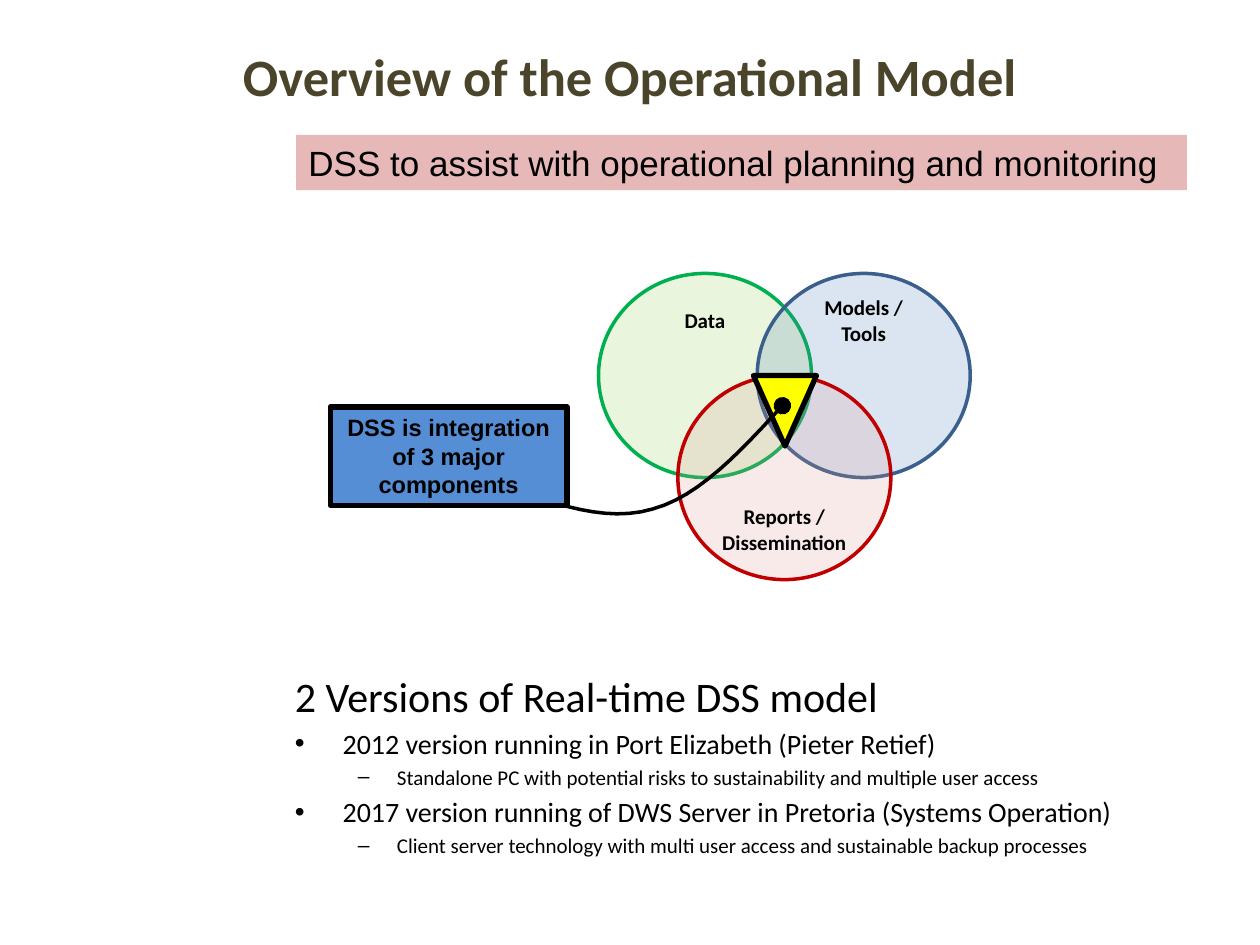
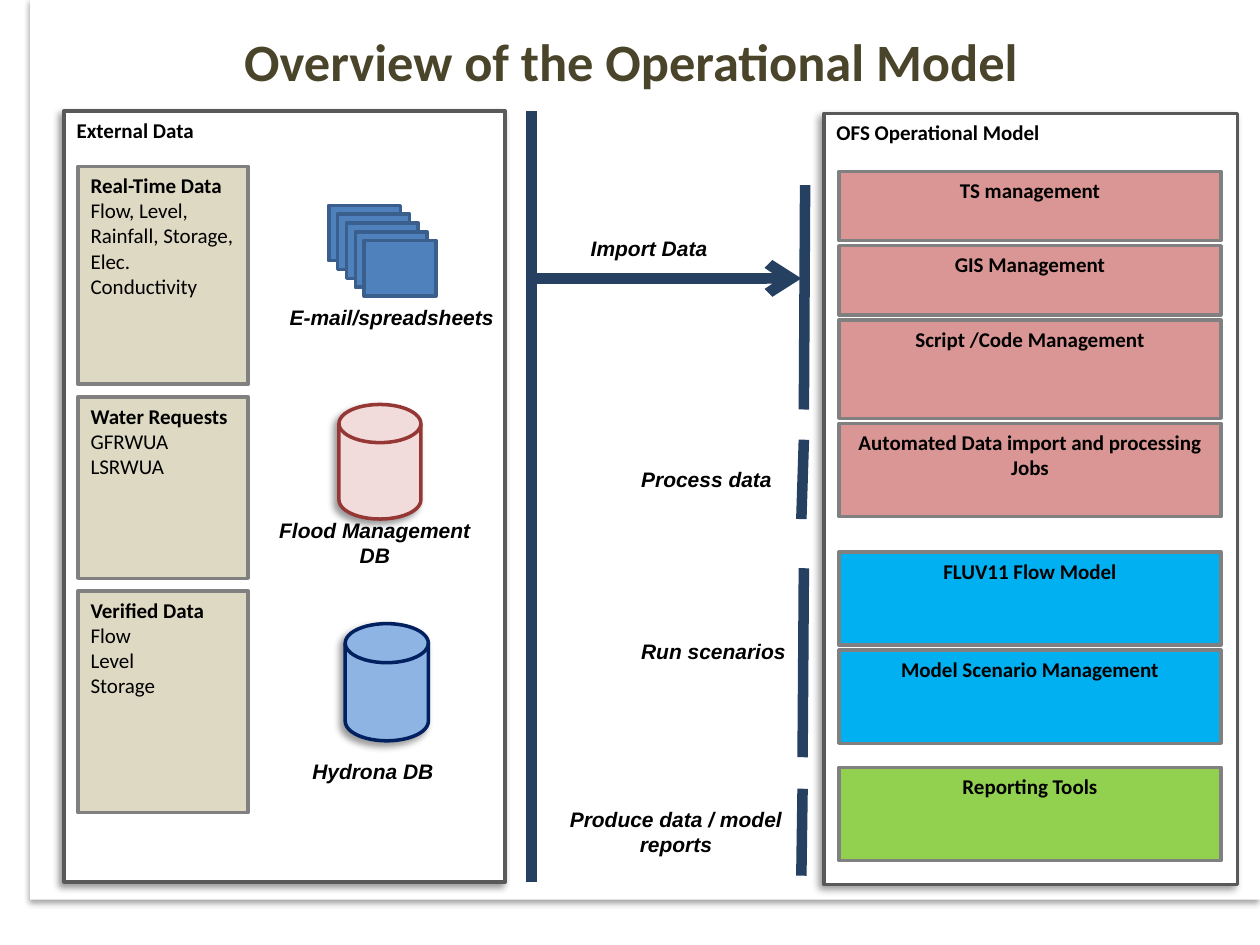
from collections import namedtuple

from lxml import etree
from pptx import Presentation
from pptx.dml.color import RGBColor
from pptx.enum import shapes as kinds, text as layout
from pptx.oxml import ns
from pptx.util import Inches, Pt

Box = namedtuple("Box", "left top width height")
SHAPE = kinds.MSO_SHAPE
LEFT, CENTER = layout.PP_ALIGN.LEFT, layout.PP_ALIGN.CENTER
TOP, MIDDLE = layout.MSO_ANCHOR.TOP, layout.MSO_ANCHOR.MIDDLE

TITLE = "Overview of the Operational Model"
BLACK, WHITE, OLIVE, NAVY = "000000", "FFFFFF", "4A452A", "254061"
BLUE, DARK_BLUE, GRAY, DARK_GRAY = "4F81BD", "3A5F8C", "808080", "595959"
ROSE, SKY, GREEN, TAN = "D99694", "00B0F0", "92D050", "DDD9C3"

TITLE_FONT = {"name": "Calibri", "size": Pt(30), "bold": True}
LABEL_FONT = {"name": "Calibri", "size": Pt(12), "bold": True}
CAPTION_FONT = {"name": "Arial", "size": Pt(12), "bold": True, "italic": True}
# Shadows: opacity in percent, blur and distance in points, direction in degrees
PANEL_SHADOW = (40, 4, 3, 135)
CARD_SHADOW = (35, 3.1, 1.8, 90)


def color(code):
    return RGBColor.from_string(code)


def set_attributes(target, values):
    for name, value in values.items():
        setattr(target, name, value)


def inches(box):
    return [Inches(value) for value in box]


def within(box, left, top, width, height):
    """Box given by its offset from the corner of another box."""
    return Box(box.left + left, box.top + top, width, height)


def add_xml(parent, tag, **attributes):
    return etree.SubElement(parent, ns.qn(tag), attributes)


def set_transparency(fill_owner, percent):
    fill_color = fill_owner._element.spPr.find(ns.qn("a:solidFill"))[0]
    add_xml(fill_color, "a:alpha", val=str(percent * 1000))


def add_shadow(shape, opacity, blur, distance, direction):
    effects = shape._element.spPr.find(ns.qn("a:effectLst"))
    shadow = add_xml(effects, "a:outerShdw", blurRad=str(Pt(blur)), dist=str(Pt(distance)),
                     dir=str(direction * 60000), algn="ctr", rotWithShape="0")
    shadow_color = add_xml(shadow, "a:srgbClr", val=BLACK)
    add_xml(shadow_color, "a:alpha", val=str(opacity * 1000))


def style_line(line, line_color, width):
    line.color.rgb = color(line_color)
    line.width = Pt(width)


def write(shape, lines, font, align=LEFT, anchor=TOP, font_color=BLACK):
    """Fill a shape with one paragraph for each line."""
    frame = shape.text_frame
    set_attributes(frame, {"word_wrap": True, "vertical_anchor": anchor,
                           "auto_size": layout.MSO_AUTO_SIZE.NONE})
    frame.text = "\n".join(lines)
    for paragraph in frame.paragraphs:
        paragraph.alignment = align
        set_attributes(paragraph.font, font)
        paragraph.font.color.rgb = color(font_color)
    return frame


def add_block(shapes, box, fill, line=None, kind=SHAPE.RECTANGLE, shadow=None):
    """Preset shape; line is a colour and a width in points."""
    shape = shapes.add_shape(kind, *inches(box))
    shape.shadow.inherit = False
    shape.fill.solid()
    shape.fill.fore_color.rgb = color(fill)
    if line:
        style_line(shape.line, *line)
    else:
        shape.line.fill.background()
    if shadow:
        add_shadow(shape, *shadow)
    return shape


def add_caption(shapes, box, *lines, align=CENTER):
    write(shapes.add_textbox(*inches(box)), lines, CAPTION_FONT, align)


def add_rule(shapes, start, end, arrow=False):
    connector = shapes.add_connector(kinds.MSO_CONNECTOR.STRAIGHT, *inches(start + end))
    style_line(connector.line, NAVY, 6)
    if arrow:
        add_xml(connector.line._get_or_add_ln(), "a:tailEnd", type="arrow")
    add_xml(connector._element.spPr, "a:effectLst")


def add_title(slide, box):
    title = slide.shapes.title
    set_attributes(title, dict(zip(Box._fields, inches(box))))
    write(title, [TITLE], TITLE_FONT, CENTER, font_color=OLIVE)


def add_components(shapes, box):
    """Three overlapping circles, with a triangle where they meet."""
    width, height = 1.69, 1.62
    circles = [("Data", 0, 0, -0.44, GREEN, "00B050"),
               ("Models / Tools", 1.26, 0, -0.44, BLUE, DARK_BLUE),
               ("Reports / Dissemination", 0.63, 0.81, 0.41, ROSE, "C00000")]
    for label, left, top, label_shift, fill, line_color in circles:
        circle = add_block(shapes, within(box, left, top, width, height), fill,
                           (line_color, 2), SHAPE.OVAL)
        set_transparency(circle, 20)
        frame = write(circle, [label], LABEL_FONT, CENTER, MIDDLE)
        frame.margin_top = Inches(max(0, 2 * label_shift))
        frame.margin_bottom = Inches(max(0, -2 * label_shift))
    triangle = add_block(shapes, within(box, 1.23, 0.81, 0.5, 0.56), "FFFF00", (BLACK, 3),
                         SHAPE.ISOSCELES_TRIANGLE)
    triangle.rotation = 180


def bezier(points, steps=12):
    """Points along a cubic curve, without its start."""
    for step in range(1, steps + 1):
        t = step / steps
        weights = ((1 - t) ** 3, 3 * t * (1 - t) ** 2, 3 * t ** 2 * (1 - t), t ** 3)
        yield tuple(Inches(sum(weight * point[axis] for weight, point in zip(weights, points)))
                    for axis in (0, 1))


def add_pointer(shapes, box):
    """Curve from a dot at the upper right to the left edge of the box."""
    offsets = [(2.2, 0), (1.87, 0.36), (1.54, 0.72), (1.17, 0.82),
               (0.8, 0.93), (0.4, 0.78), (0, 0.64)]
    points = [(box.left + x, box.top + y) for x, y in offsets]
    builder = shapes.build_freeform(*inches(points[0]))
    for first in (0, 3):
        builder.add_line_segments(list(bezier(points[first:first + 4])), close=False)
    curve = builder.convert_to_shape()
    curve.shadow.inherit = False
    curve.fill.background()
    style_line(curve.line, BLACK, 2)
    add_xml(curve.line._get_or_add_ln(), "a:headEnd", type="oval", w="lg", len="lg")


def add_versions(body, box):
    set_attributes(body, dict(zip(Box._fields, inches(box))))
    styles = {"heading": (0, 24, 0, 0, None),
              "item": (0, 16, 0.38, -0.38, "•"),
              "detail": (1, 12, 0.81, -0.31, "–")}
    lines = [
        ("heading", "2 Versions of Real-time DSS model"),
        ("item", "2012 version running in Port Elizabeth (Pieter Retief)"),
        ("detail", "Standalone PC with potential risks to sustainability and multiple user access"),
        ("item", "2017 version running of DWS Server in Pretoria (Systems Operation)"),
        ("detail", "Client server technology with multi user access and sustainable backup processes"),
    ]
    frame = body.text_frame
    frame.text = "\n".join(line for _, line in lines)
    set_attributes(frame, {"auto_size": layout.MSO_AUTO_SIZE.NONE, "vertical_anchor": TOP})
    for paragraph, (style, _) in zip(frame.paragraphs, lines):
        level, size, margin, indent, bullet = styles[style]
        properties = paragraph._p.get_or_add_pPr()
        properties.set("marL", str(Inches(margin)))
        properties.set("indent", str(Inches(indent)))
        if bullet:
            add_xml(properties, "a:buFont", typeface="Arial")
            add_xml(properties, "a:buChar", char=bullet)
        else:
            add_xml(properties, "a:buNone")
        space = 0 if style == "heading" else size * 0.2
        set_attributes(paragraph, {"level": level, "space_before": Pt(space)})
        set_attributes(paragraph.font, {"name": "Calibri", "size": Pt(size)})
        paragraph.font.color.rgb = color(BLACK)


def build_integration_slide(presentation):
    slide = presentation.slides.add_slide(presentation.slide_layouts[1])
    shapes = slide.shapes
    add_title(slide, Box(0.5, 0.3, 9, 1.25))
    banner = add_block(shapes, Box(2.35, 1.07, 7.07, 0.44), "E6B9B8")
    write(banner, ["DSS to assist with operational planning and monitoring"],
          {"name": "Arial", "size": Pt(20)})
    add_versions(slide.placeholders[1], Box(2.24, 5.27, 7.26, 1.73))
    add_components(shapes, Box(4.75, 2.17, 2.95, 2.43))
    add_pointer(shapes, Box(4.01, 3.22, 2.2, 0.85))
    callout = add_block(shapes, Box(2.62, 3.23, 1.88, 0.78), "558ED5", (BLACK, 3))
    write(callout, ["DSS is integration of 3 major components"],
          {"name": "Arial", "size": Pt(13.5), "bold": True}, CENTER)


def add_panel(shapes, box, heading):
    panel = add_block(shapes, box, WHITE, (DARK_GRAY, 2), shadow=PANEL_SHADOW)
    write(panel, [heading], LABEL_FONT)


def add_database(shapes, box, fill, line_color):
    add_block(shapes, box, fill, (line_color, 2), SHAPE.FLOWCHART_MAGNETIC_DISK, PANEL_SHADOW)


def add_external_data(shapes, box):
    add_panel(shapes, box, "External Data")
    sources = [
        (1.73, ["Real-Time Data", "Flow, Level, Rainfall, Storage,", "Elec. Conductivity"]),
        (1.44, ["Water Requests", "GFRWUA", "LSRWUA"]),
        (1.76, ["Verified Data", "Flow", "Level", "Storage"]),
    ]
    top = 0.44
    for height, lines in sources:
        source = add_block(shapes, within(box, 0.11, top, 1.35, height), TAN, (GRAY, 2))
        for paragraph in write(source, lines, LABEL_FONT).paragraphs[1:]:
            paragraph.font.bold = False
        top += height + 0.1

    archive = shapes.add_group_shape().shapes
    add_database(archive, within(box, 2.23, 4.07, 0.66, 0.93), "8EB4E3", "002060")
    add_caption(archive, within(box, 1.87, 5.09, 1.38, 0.3), "Hydrona DB", align=LEFT)

    flood = shapes.add_group_shape().shapes
    add_database(flood, within(box, 2.18, 2.33, 0.65, 0.91), "F2DCDB", "953735")
    add_caption(flood, within(box, 1.22, 3.18, 2.49, 0.5), "Flood Management", "DB")

    sheets = shapes.add_group_shape().shapes
    for index in range(5):
        shift = index * 0.07
        add_block(sheets, within(box, 2.1 + shift, 0.75 + shift, 0.57, 0.44), BLUE,
                  (DARK_BLUE, 2))
    add_caption(sheets, within(box, 1.35, 1.49, 2.5, 0.3), "E-mail/spreadsheets")


def add_operational_model(shapes, box):
    add_panel(shapes, box, "OFS Operational Model")
    groups = [
        (0.46, ROSE, [("TS management", 0.55), ("GIS Management", 0.55),
                      ("Script /Code Management", 0.78),
                      ("Automated Data import and processing Jobs", 0.74)]),
        (3.48, SKY, [("FLUV11 Flow Model", 0.74), ("Model Scenario Management", 0.74)]),
        (5.19, GREEN, [("Reporting Tools", 0.74)]),
    ]
    for top, fill, modules in groups:
        for label, height in modules:
            module = add_block(shapes, within(box, 0.12, top, box.width - 0.25, height), fill,
                               (GRAY, 2))
            write(module, [label], LABEL_FONT, CENTER)
            top += height + 0.04


def add_process_steps(shapes, box):
    """Long rule at the left, with a short rule and a caption for each step."""
    left, top = box.left, box.top
    add_rule(shapes, (left, top), (left, top + box.height))
    add_rule(shapes, (left, top + 1.33), (left + 2.14, top + 1.33), arrow=True)
    for x, start, end, slant in [(2.17, 0.59, 2.37, 0.01), (2.16, 2.61, 3.24, 0.02),
                                 (2.16, 3.63, 5.13, 0.01), (2.15, 5.38, 6.07, 0.01)]:
        add_rule(shapes, (left + x, top + start), (left + x - slant, top + end))
    for label, x, y, width in [("Import Data", 0.37, 0.94, 3.06),
                               ("Process data", 0.77, 2.77, 1.95),
                               ("Run scenarios", 0.77, 4.14, 3.06)]:
        add_caption(shapes, within(box, x, y, width, 0.3), label, align=LEFT)
    add_caption(shapes, within(box, 0.19, 5.47, 1.91, 0.51), "Produce data / model reports")


def build_data_flow_slide(presentation):
    slide = presentation.slides.add_slide(presentation.slide_layouts[5])
    shapes = slide.shapes
    card = add_block(shapes, Box(0.24, 0, 9.76, 7.14), WHITE, shadow=CARD_SHADOW)
    shapes.title._element.addprevious(card._element)
    add_title(slide, Box(0.51, 0.18, 9, 1.25))
    add_external_data(shapes, Box(0.51, 0.88, 3.5, 6.12))
    add_operational_model(shapes, Box(6.54, 0.9, 3.28, 6.12))
    add_process_steps(shapes, Box(4.22, 0.88, 2.17, 6.12))


def main():
    presentation = Presentation()
    set_attributes(presentation, {"slide_width": Inches(10), "slide_height": Inches(7.5)})
    build_integration_slide(presentation)
    build_data_flow_slide(presentation)
    presentation.save("out.pptx")


if __name__ == "__main__":
    main()
